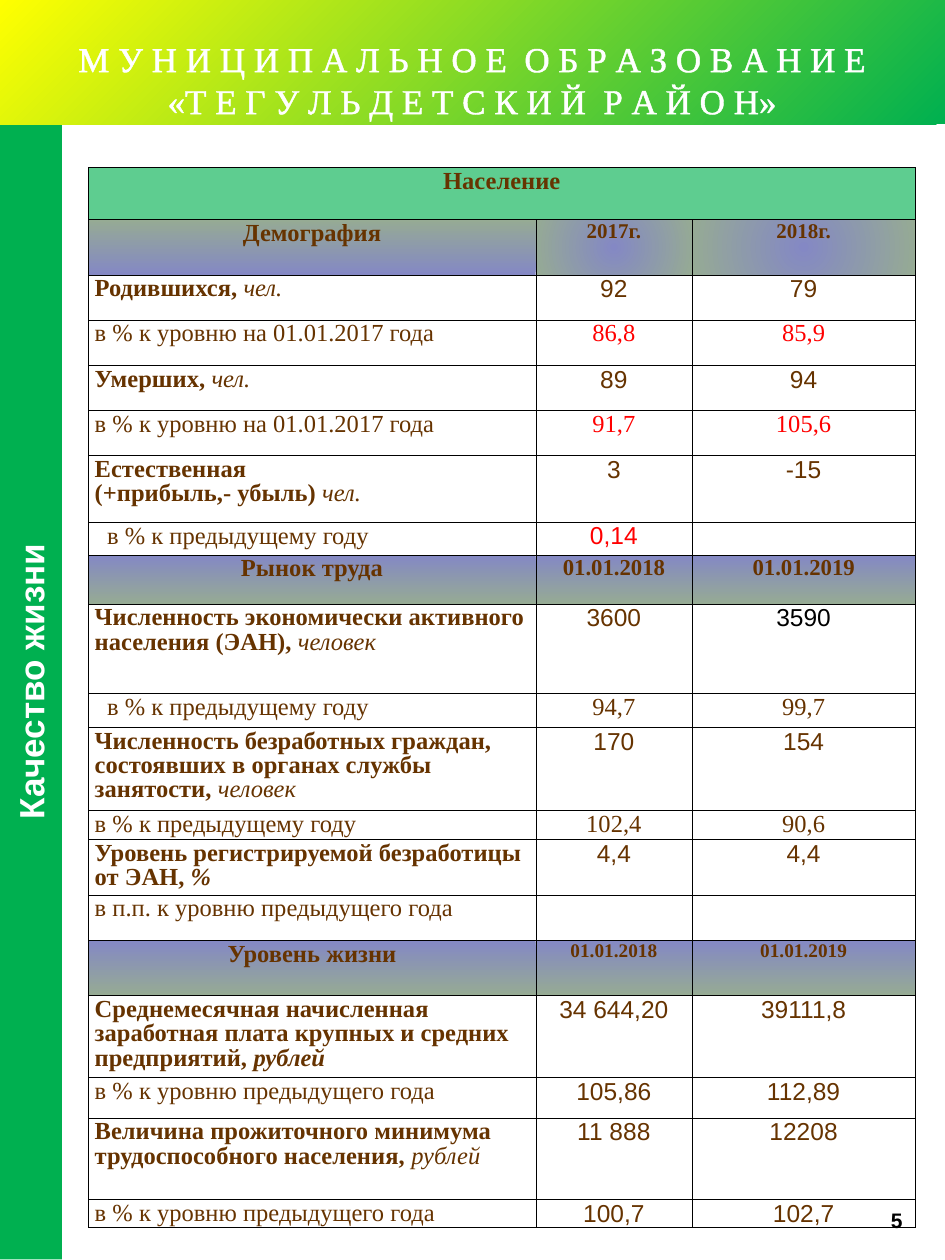
import dataclasses
import typing

import lxml.etree
import pptx
import pptx.dml.color
import pptx.enum.shapes
import pptx.enum.text
import pptx.oxml.ns
import pptx.util

Cm = pptx.util.Cm
Pt = pptx.util.Pt
qn = pptx.oxml.ns.qn
CENTER = pptx.enum.text.PP_ALIGN.CENTER
LEFT = pptx.enum.text.PP_ALIGN.LEFT

COLORS = {
    "green": "00B050", "yellow": "FFFF00", "violet": "8488C4", "sage": "96AB94",
    "brown": "663300", "red": "FF0000", "black": "000000", "white": "FFFFFF",
}
SERIF = {"name": "Times New Roman", "size": Pt(14), "bold": False, "italic": False, "color": "brown"}
SANS = SERIF | {"name": "Arial"}
FORMATS = {
    "plain": SERIF,
    "bold": SERIF | {"bold": True},
    "italic": SERIF | {"italic": True},
    "bold italic": SERIF | {"bold": True, "italic": True},
    "year": SERIF | {"bold": True, "size": Pt(12)},
    "date": SERIF | {"bold": True, "size": Pt(13)},
    "small date": SERIF | {"bold": True, "size": Pt(11)},
    "red": SERIF | {"color": "red"},
    "count": SANS,
    "black count": SANS | {"color": "black"},
    "red count": SANS | {"color": "red"},
    "title": SERIF | {"size": Pt(20), "color": "white"},
    "side title": SANS | {"size": Pt(20), "bold": True, "color": "white"},
    "page number": SANS | {"size": Pt(12), "bold": True, "color": "black"},
}


class Span(typing.NamedTuple):
    text: str
    style: str = "plain"
    new_paragraph: bool = False


@dataclasses.dataclass
class Row:
    height: float
    label: tuple[Span, ...]
    values: tuple[str, str] = ("", "")
    styles: tuple[str, str] = ("count", "count")
    heading: str = ""  # gradient of a heading row: "down", "up" or "flat"
    indent: float = 0


def measure(height: float, name: str, unit: str, values: tuple[str, str],
            styles: tuple[str, str] = ("count", "count"), unit_style: str = "italic") -> Row:
    return Row(height, (Span(name + " ", "bold"), Span(unit, unit_style)), values, styles)


def share(height: float, name: str, values: tuple[str, str] = ("", ""),
          style: str = "plain", indent: float = 0) -> Row:
    return Row(height, (Span(name),), values, (style, style), indent=indent)


def heading(height: float, name: str, values: tuple[str, str], style: str, direction: str = "down") -> Row:
    return Row(height, (Span(name, "bold"),), values, (style, style), direction)


ROWS = (
    heading(1.04, "Население", ("", ""), "bold", "flat"),
    heading(1.12, "Демография", ("2017г.", "2018г."), "year", "up"),
    measure(0.91, "Родившихся,", "чел.", ("92", "79")),
    share(0.91, "в % к уровню на 01.01.2017 года", ("86,8", "85,9"), "red"),
    measure(0.91, "Умерших,", "чел.", ("89", "94")),
    share(0.91, "в % к уровню на 01.01.2017 года", ("91,7", "105,6"), "red"),
    Row(1.35, (Span("Естественная", "bold"), Span("(+прибыль,- убыль) ", "bold", True),
               Span("чел.", "italic")), ("3", "-15")),
    share(0.61, "в % к предыдущему году", ("0,14", ""), "red count", 0.25),
    heading(0.99, "Рынок труда", ("01.01.2018", "01.01.2019"), "date"),
    measure(1.8, "Численность экономически активного населения (ЭАН),", "человек",
            ("3600", "3590"), ("count", "black count")),
    share(0.69, "в % к предыдущему году", ("94,7", "99,7"), indent=0.25),
    measure(1.68, "Численность безработных граждан, состоявших в органах службы занятости,",
            "человек", ("170", "154")),
    share(0.58, "в % к предыдущему году", ("102,4", "90,6")),
    measure(1.12, "Уровень регистрируемой безработицы от ЭАН,", "%", ("4,4", "4,4"), unit_style="bold italic"),
    share(0.91, "в п.п. к уровню предыдущего года"),
    heading(1.12, "Уровень жизни", ("01.01.2018", "01.01.2019"), "small date"),
    measure(1.65, "Среднемесячная начисленная заработная плата крупных и средних предприятий,",
            "рублей", ("34 644,20", "39111,8"), unit_style="bold italic"),
    share(0.81, "в % к уровню предыдущего года", ("105,86", "112,89"), "count"),
    measure(1.65, "Величина прожиточного минимума трудоспособного населения,", "рублей", ("11 888", "12208")),
    share(0.46, "в % к уровню предыдущего года", ("100,7", "102,7"), "count"),
)
COLUMNS = (9.02, 3.15, 4.5)


def rgb(color: str) -> pptx.dml.color.RGBColor:
    return pptx.dml.color.RGBColor.from_string(COLORS[color])


def add_span(para, text: str, style: str):
    span = para.add_run()
    span.text = text
    for name, value in FORMATS[style].items():
        if name == "color":
            span.font.color.rgb = rgb(value)
        else:
            setattr(span.font, name, value)
    return span


def set_gradient(fill, start: str, end: str, angle: float) -> None:
    """Fill from start to end; the angle runs counter-clockwise."""
    fill.gradient()
    fill.gradient_angle = angle
    for stop, color in zip(fill.gradient_stops, (start, end)):
        stop.color.rgb = rgb(color)


def add_solid(parent, color: str, alpha: int = 100) -> None:
    solid = lxml.etree.SubElement(parent, qn("a:solidFill"))
    tint = lxml.etree.SubElement(solid, qn("a:srgbClr"), val=COLORS[color])
    if alpha < 100:
        lxml.etree.SubElement(tint, qn("a:alpha"), val=str(alpha * 1000))


def make_radial(properties) -> None:
    gradient = properties.find(qn("a:gradFill"))
    gradient.remove(gradient.find(qn("a:lin")))
    circle = lxml.etree.SubElement(gradient, qn("a:path"), path="circle")
    lxml.etree.SubElement(circle, qn("a:fillToRect"), l="50000", t="50000", r="50000", b="50000")


def style_cell(cell, direction: str, is_label: bool) -> None:
    properties = cell._tc.get_or_add_tcPr()
    for side in ("a:lnL", "a:lnR", "a:lnT", "a:lnB"):
        add_solid(lxml.etree.SubElement(properties, qn(side), w=str(Pt(0.25))), "black")
    if direction == "flat":
        add_solid(properties, "green", 63)
    elif direction:
        set_gradient(cell.fill, "violet", "sage", 90 if direction == "up" else 270)
        if direction == "up" and not is_label:
            make_radial(properties)
    else:
        cell.fill.background()


def fill_cell(cell, spans: tuple[Span, ...], row: Row, is_label: bool) -> None:
    style_cell(cell, row.heading, is_label)
    is_count = spans[0].style in ("count", "black count")
    margins = {"margin_left": Cm(0.13 + (row.indent if is_label else 0)), "margin_right": Cm(0.13),
               "margin_top": Cm(0.08 if is_count else 0.05), "margin_bottom": 0}
    for name, value in margins.items():
        setattr(cell, name, value)
    para = cell.text_frame.paragraphs[0]
    for span in spans:
        if span.new_paragraph:
            para = cell.text_frame.add_paragraph()
        para.alignment = LEFT if is_label and not row.heading else CENTER
        para.line_spacing = 0.87 if is_count else 0.9
        if span.text:
            add_span(para, span.text, span.style)
        else:
            lxml.etree.SubElement(para._p, qn("a:endParaRPr"), sz="1400")


def draw_table(slide) -> None:
    frame = slide.shapes.add_table(len(ROWS), len(COLUMNS), Cm(1.78), Cm(3.38),
                                   Cm(sum(COLUMNS)), Cm(sum(row.height for row in ROWS)))
    table = frame.table
    table.first_row = table.horz_banding = False
    for column, width in zip(table.columns, COLUMNS):
        column.width = Cm(width)
    for index, row in enumerate(ROWS):
        table.rows[index].height = Cm(row.height)
        fill_cell(table.cell(index, 0), row.label, row, True)
        for column, (text, style) in enumerate(zip(row.values, row.styles), 1):
            fill_cell(table.cell(index, column), (Span(text, style),), row, False)
    table.cell(0, 0).merge(table.cell(0, len(COLUMNS) - 1))


def add_rectangle(slide, left: float, top: float, width: float, height: float):
    box = slide.shapes.add_shape(pptx.enum.shapes.MSO_SHAPE.RECTANGLE, Cm(left), Cm(top), Cm(width), Cm(height))
    box.shadow.inherit = False
    box.line.fill.background()
    box.text_frame.paragraphs[0].alignment = CENTER
    return box


def draw_side_band(slide) -> None:
    length, thickness = 23.3, 1.27
    box = add_rectangle(slide, (thickness - length) / 2 - 0.02, 13.1, length, thickness)
    box.rotation = 270
    box.fill.solid()
    box.fill.fore_color.rgb = rgb("green")
    add_span(box.text_frame.paragraphs[0], "Качество жизни", "side title")


def draw_page_number(slide) -> None:
    box = slide.shapes.add_textbox(Cm(17.53), Cm(24.21), Cm(1.09), Cm(0.76))
    box.text_frame.word_wrap = True
    para = box.text_frame.paragraphs[0]
    para.alignment = CENTER
    add_span(para, "5", "page number")


def draw_banner(slide) -> None:
    box = add_rectangle(slide, 0, 0, 19.05, 2.51)
    set_gradient(box.fill, "green", "yellow", 135)
    box.text_frame.vertical_anchor = pptx.enum.text.MSO_ANCHOR.TOP
    box.text_frame.margin_top, box.text_frame.margin_bottom = Cm(0.75), 0
    para = box.text_frame.paragraphs[0]
    lines = ("М У Н И Ц И П А Л Ь Н О Е  О Б Р А З О В А Н И Е", "«Т Е Г У Л Ь Д Е Т С К И Й  Р А Й О Н»")
    for index, line in enumerate(lines):
        if index:
            para.add_line_break()
        properties = add_span(para, line, "title").font._element
        outline = lxml.etree.Element(qn("a:ln"), w=str(Pt(1.45)))
        add_solid(outline, "white")
        properties.insert(0, outline)
    para._p.find(qn("a:br")).insert(0, lxml.etree.Element(qn("a:rPr"), sz="2000"))


def main() -> None:
    deck = pptx.Presentation()
    deck.slide_width, deck.slide_height = Cm(19.05), Cm(25.4)
    slide = deck.slides.add_slide(deck.slide_layouts[6])
    draw_table(slide)
    draw_side_band(slide)
    draw_page_number(slide)
    draw_banner(slide)
    deck.save("out.pptx")


if __name__ == "__main__":
    main()
